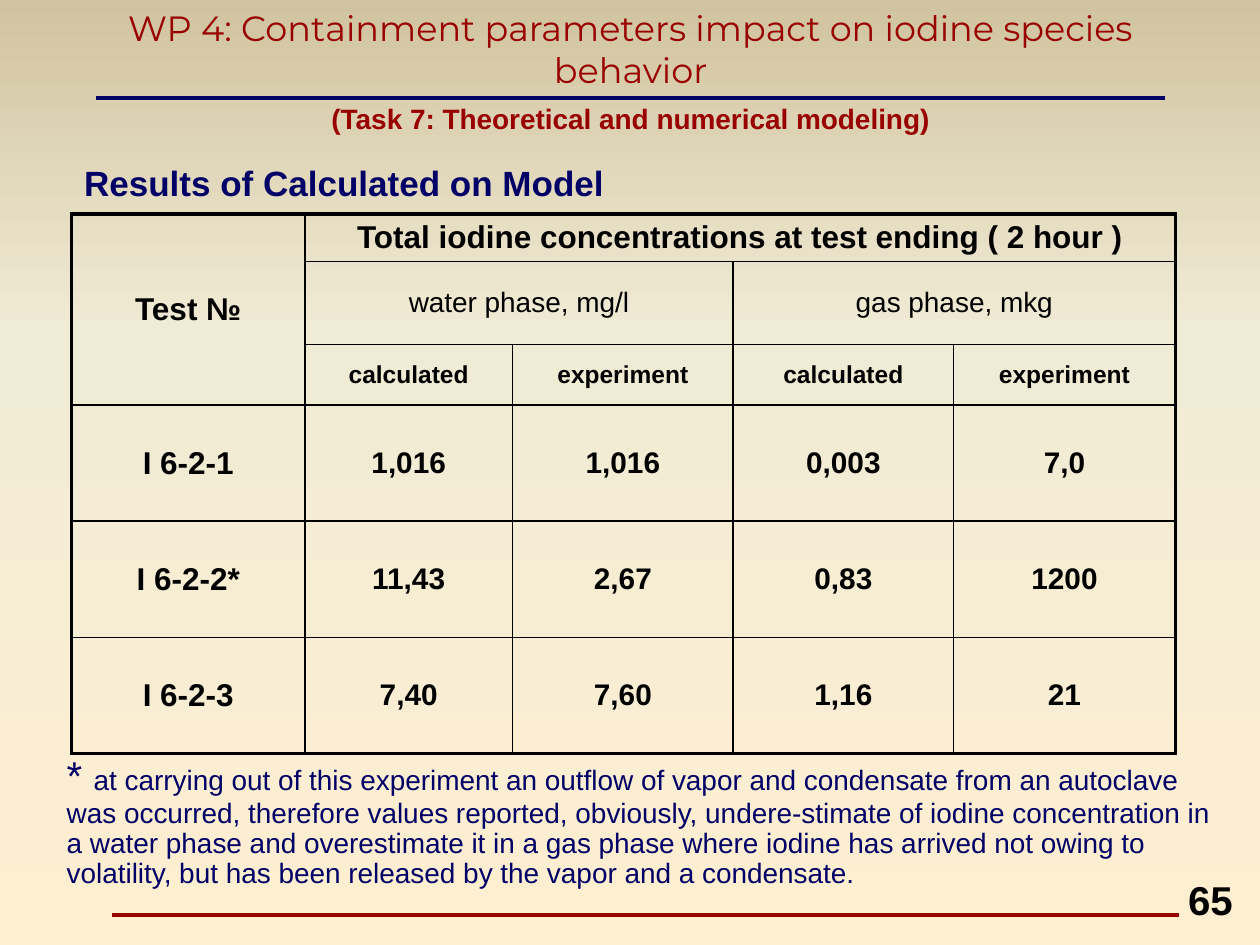
from copy import deepcopy

from pptx import Presentation
from pptx.dml.color import RGBColor
from pptx.enum.shapes import MSO_CONNECTOR
from pptx.enum.text import MSO_ANCHOR, PP_ALIGN
from pptx.oxml.ns import qn
from pptx.util import Pt
from lxml.etree import SubElement

NAVY, RED, BLACK = "000066", "990000", "000000"
THICK, THIN = 2.25, 1

COLUMN_WIDTHS = [133.2, 118.8, 126, 126, 126.7]
ROW_HEIGHTS = [27, 47.5, 34.6, 66.4, 66.4, 66.4]
# (row, column, row span, column span, text, size, bold)
HEADERS = [
    (0, 0, 3, 1, "Test №", 18, True),
    (0, 1, 1, 4, "Total iodine concentrations at test ending ( 2 hour )", 18, True),
    (1, 1, 1, 2, "water phase, mg/l", 16, False),
    (1, 3, 1, 2, "gas phase, mkg", 16, False),
]
SUBHEADERS = ["calculated", "experiment"] * 2
RESULTS = [
    ["I 6-2-1", "1,016", "1,016", "0,003", "7,0"],
    ["I 6-2-2*", "11,43", "2,67", "0,83", "1200"],
    ["I 6-2-3", "7,40", "7,60", "1,16", "21"],
]
FOOTNOTE = (
    "at carrying out of this experiment an outflow of vapor and condensate from an "
    "autoclave was occurred, therefore values reported, obviously, undere-stimate of "
    "iodine concentration in a water phase and overestimate it in a gas phase where "
    "iodine has arrived not owing to volatility, but has been released by the vapor "
    "and a condensate."
)


def color(value):
    return RGBColor.from_string(value)


def add_run(paragraph, text, size, fill, bold=False, font="Arial"):
    run = paragraph.add_run()
    run.text = text
    run.font.name = font
    run.font.size = Pt(size)
    run.font.bold = bold
    run.font.color.rgb = color(fill)


def add_text(slide, box, runs, align=PP_ALIGN.LEFT, wrap=True):
    """Place a text box; each run is (text, size, colour, bold)."""
    shape = slide.shapes.add_textbox(*map(Pt, box))
    shape.text_frame.word_wrap = wrap
    paragraph = shape.text_frame.paragraphs[0]
    paragraph.alignment = align
    for run in runs:
        add_run(paragraph, *run)
    return paragraph


def add_rule(slide, left, top, width, fill):
    line = slide.shapes.add_connector(
        MSO_CONNECTOR.STRAIGHT, Pt(left), Pt(top), Pt(left + width), Pt(top))
    line.line.color.rgb = color(fill)
    line.line.width = Pt(THICK)
    SubElement(line.element.spPr, qn("a:effectLst"))


def set_background(slide, stops):
    fill = slide.background.fill
    fill.gradient()
    fill.gradient_angle = 270
    stop_list = slide.element.find(".//" + qn("a:gsLst"))
    while len(stop_list) < len(stops):
        stop_list.append(deepcopy(stop_list[-1]))
    for stop, (position, value) in zip(fill.gradient_stops, stops):
        stop.position = position
        stop.color.rgb = color(value)


def add_heading(slide, box):
    left, top, width, height = box
    # Title, raised above the rule by a deep bottom inset
    title = slide.shapes.title
    title.left, title.top, title.width, title.height = map(Pt, box)
    frame = title.text_frame
    frame.word_wrap = True
    frame.vertical_anchor = MSO_ANCHOR.MIDDLE
    frame.margin_left = frame.margin_right = Pt(7.2)
    frame.margin_top, frame.margin_bottom = Pt(3.6), Pt(27.6)
    paragraph = frame.paragraphs[0]
    paragraph.alignment = PP_ALIGN.CENTER
    add_run(paragraph, "WP 4: Containment parameters impact on iodine species behavior",
            20, RED, font="Montserrat")
    # Rule and task line
    add_rule(slide, left + 34.6, top + 41, width - 69.6, NAVY)
    add_text(slide, (left, top + 39.6, width, 26.6),
             [("(Task 7: Theoretical and numerical modeling)", 16, RED, True)],
             PP_ALIGN.CENTER)


def set_borders(cell, widths):
    properties = cell._tc.get_or_add_tcPr()
    for side, width in zip("LRTB", widths):
        line = SubElement(properties, qn(f"a:ln{side}"), w=str(Pt(width)))
        solid = SubElement(line, qn("a:solidFill"))
        SubElement(solid, qn("a:srgbClr"), val=BLACK)


def write_cell(cell, text, size, bold=True):
    paragraph = cell.text_frame.paragraphs[0]
    paragraph.alignment = PP_ALIGN.CENTER
    add_run(paragraph, text, size, BLACK, bold)


def add_results_table(slide, left, top):
    row_count, column_count = len(ROW_HEIGHTS), len(COLUMN_WIDTHS)
    table = slide.shapes.add_table(
        row_count, column_count, Pt(left), Pt(top),
        Pt(sum(COLUMN_WIDTHS)), Pt(sum(ROW_HEIGHTS))).table
    table.first_row = table.horz_banding = False
    for column, width in zip(table.columns, COLUMN_WIDTHS):
        column.width = Pt(width)
    for row, height in zip(table.rows, ROW_HEIGHTS):
        row.height = Pt(height)

    # Header cells
    for row, column, row_span, column_span, text, size, bold in HEADERS:
        cell = table.cell(row, column)
        cell.merge(table.cell(row + row_span - 1, column + column_span - 1))
        write_cell(cell, text, size, bold)
    for column, text in enumerate(SUBHEADERS, 1):
        write_cell(table.cell(2, column), text, 14)

    # Measured and calculated values
    for row, values in enumerate(RESULTS, 3):
        for column, text in enumerate(values):
            write_cell(table.cell(row, column), text, 17 if column else 18)

    # Thick outer frame, thin inner grid, no fill
    for row in range(row_count):
        for column in range(column_count):
            cell = table.cell(row, column)
            last_row, last_column = row, column
            if cell.is_merge_origin:
                last_row += cell.span_height - 1
                last_column += cell.span_width - 1
            edges = (column == 0, last_column == column_count - 1,
                     row == 0, last_row == row_count - 1)
            set_borders(cell, [THICK if edge else THIN for edge in edges])
            cell.fill.background()
            cell.vertical_anchor = MSO_ANCHOR.MIDDLE
            cell.margin_left = cell.margin_right = Pt(5)
            cell.margin_top = cell.margin_bottom = Pt(2.2)


def add_results(slide, left, top):
    add_text(slide, (left, top, 633.6, 31),
             [("Results of Calculated on Model", 20, NAVY, True)])
    add_results_table(slide, left, top + 33.8)


def add_footer(slide, box):
    left, top, width, height = box
    # Footnote
    paragraph = add_text(slide, box, [("* ", 23, NAVY), (FOOTNOTE, 16, NAVY)])
    paragraph.line_spacing = 0.9
    # Rule and page number
    add_rule(slide, left + 33.1, top + 94.3, 609.8, RED)
    add_text(slide, (left + 640.8, top + 68.4, 40.3, 34.6),
             [("65", 23, BLACK, True)], wrap=False)


def main():
    presentation = Presentation()
    presentation.slide_width, presentation.slide_height = Pt(720), Pt(540)
    slide = presentation.slides.add_slide(presentation.slide_layouts[5])
    set_background(slide, [(0, "D1C39F"), (0.35, "F0EBD5"), (1, "FFEFD1")])
    add_heading(slide, (20.2, 15.1, 680.4, 49.7))
    add_results(slide, 41, 88.6)
    add_footer(slide, (31, 428.4, 670.3, 84.2))
    presentation.save("out.pptx")


if __name__ == "__main__":
    main()
